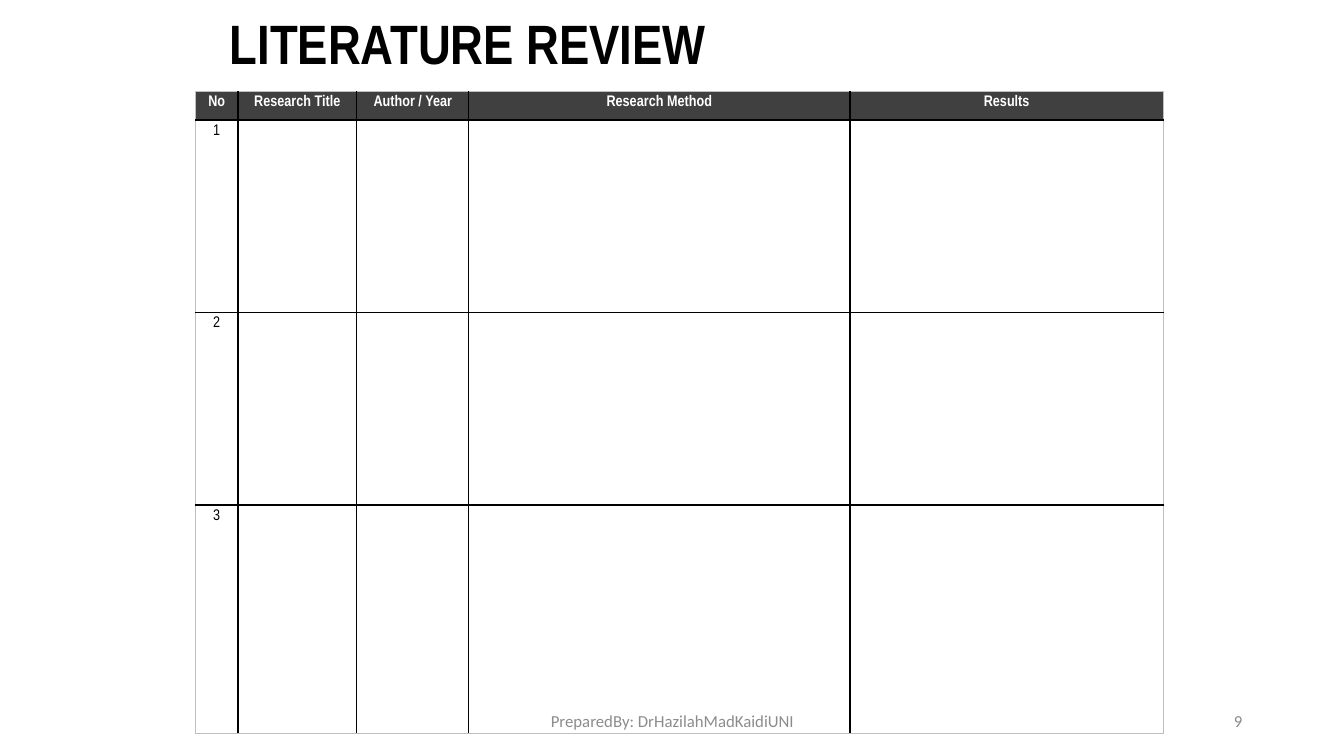
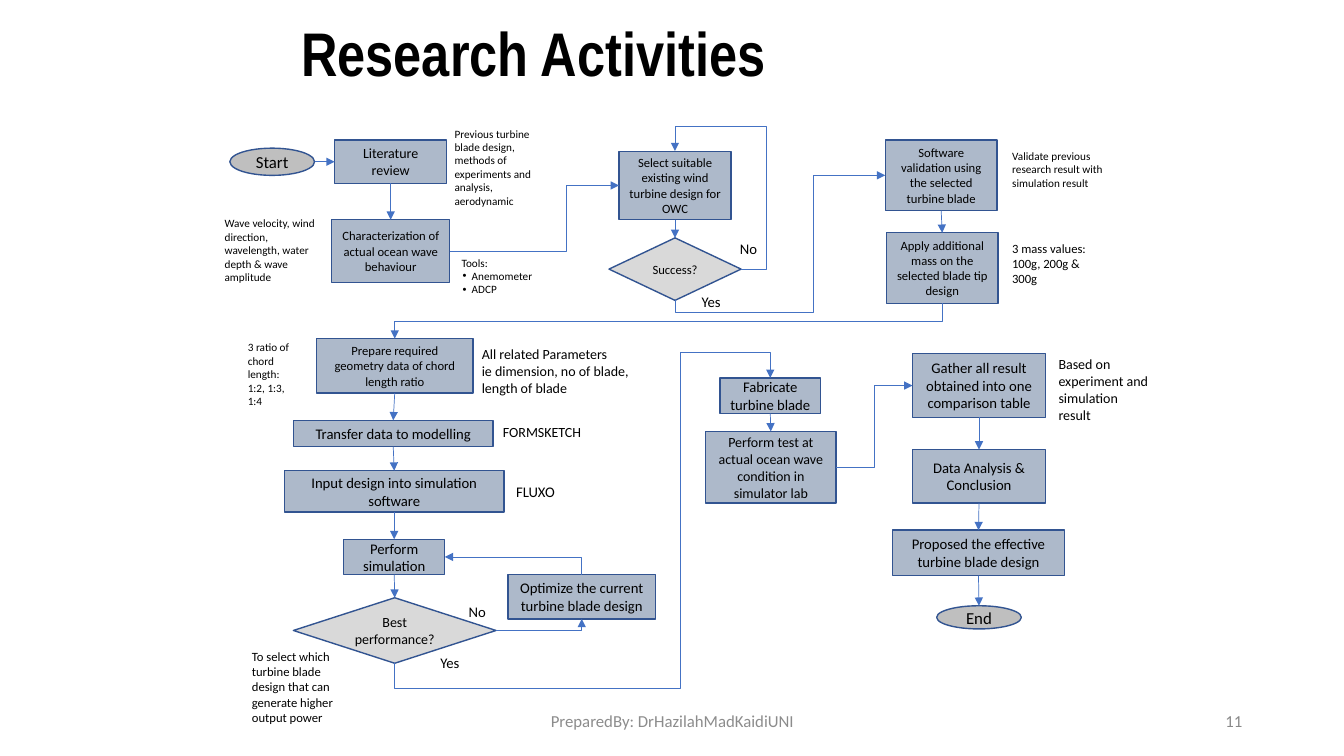
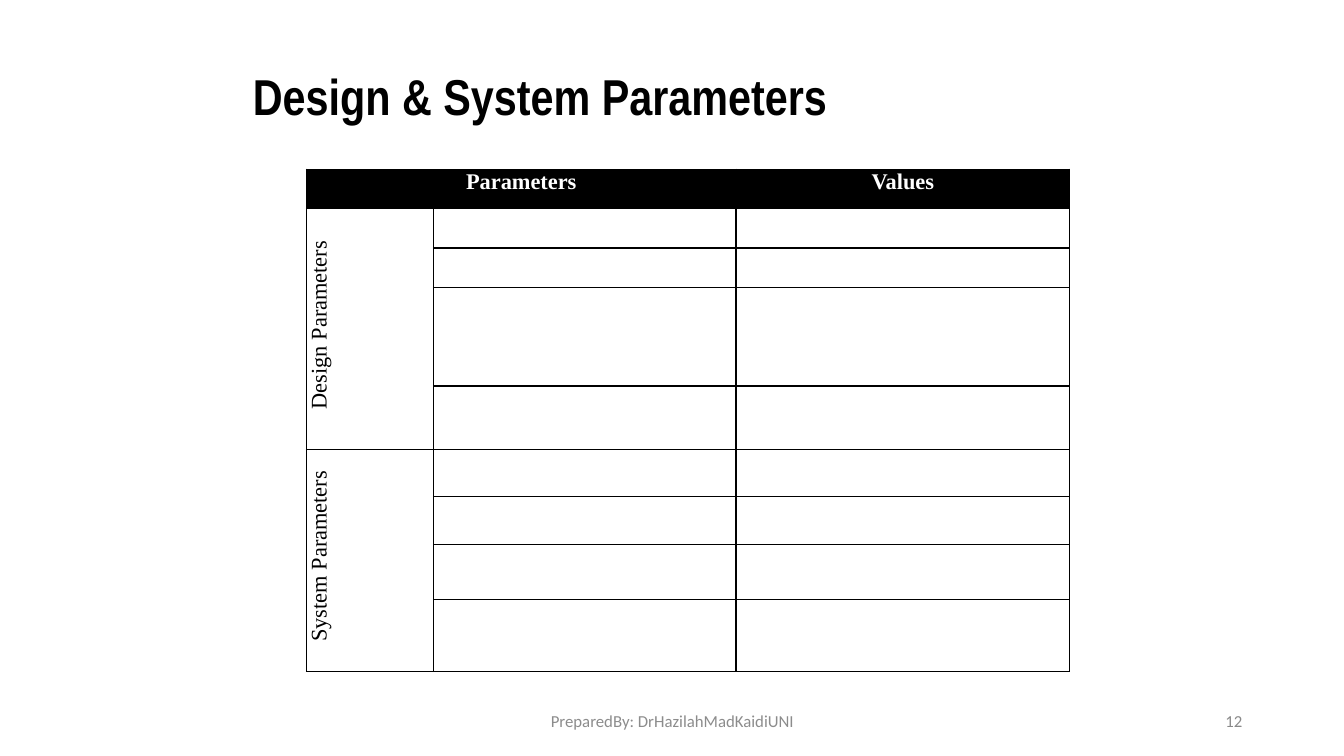
from dataclasses import dataclass
from typing import Any, NamedTuple

from lxml.etree import SubElement as Sub
from pptx import Presentation
from pptx.dml.color import RGBColor as Rgb
from pptx.enum.shapes import MSO_CONNECTOR as Link, MSO_SHAPE as Form
from pptx.enum.text import MSO_ANCHOR as Anchor, MSO_AUTO_SIZE as Auto, PP_ALIGN as Align
from pptx.oxml.ns import qn
from pptx.util import Emu, Pt

PX = 9144
HUE = {
    "ink": "000000", "paper": "FFFFFF", "head": "404040", "rim": "BFBFBF",
    "step": "ADB9CA", "choice": "D9D9D9", "end": "BFBFBF",
    "edge": "325491", "flow": "4472C4", "page": "898989", "foot": "8C8C8C",
}
BODY, TITLE, SERIF = "Calibri", "Arial Narrow", "Times New Roman"
FOOT = "PreparedBy: DrHazilahMadKaidiUNI"
KINDS = {"step": Form.RECTANGLE, "choice": Form.DIAMOND, "end": Form.OVAL}
TOP, LEFT, LOW, RIGHT = range(4)


class Box(NamedTuple):
    x: int
    y: int
    w: int
    h: int


class Node(NamedTuple):
    key: str
    kind: str
    box: Box
    text: str
    size: float


class Note(NamedTuple):
    box: Box
    text: str
    size: float
    wrap: bool = True
    dots: bool = False


class Flow(NamedTuple):
    start: str
    out: int
    end: str
    into: int
    bend: int = 0
    turn: int = 0
    flip: str = ""
    adj: tuple[float, ...] = ()


class Cell(NamedTuple):
    row: int
    col: int
    text: str
    rows: int = 1
    cols: int = 1
    side: bool = False


@dataclass
class Page:
    num: int
    title: str
    box: Box
    size: float


@dataclass
class Grid:
    box: Box
    cols: list[int]
    rows: list[int]
    cells: list[Cell]
    font: str
    size: float
    head: str
    rim: str
    pad: tuple[int, int]


def px(num: float) -> Emu:
    return Emu(round(num * PX))


def span(box: Box) -> list[Emu]:
    return [px(val) for val in box]


def rgb(hue: str) -> Rgb:
    return Rgb.from_string(HUE[hue])


def put(item: Any, vals: dict[str, Any]) -> None:
    for key, val in vals.items():
        setattr(item, key, val)


def paint(item: Any, hue: str) -> None:
    item.fill.solid()
    item.fill.fore_color.rgb = rgb(hue)


def write(frame: Any, text: str, size: float, font: str = BODY, hue: str = "ink",
          bold: bool = False, **form: Any) -> None:
    for i, line in enumerate(text.split("\n")):
        para = frame.paragraphs[0] if i == 0 else frame.add_paragraph()
        put(para, form)
        run = para.add_run()
        run.text = line
        put(run.font, {"size": Pt(size), "name": font, "bold": bold})
        run.font.color.rgb = rgb(hue)


def label(slide: Any, box: Box, text: str, size: float, **form: Any) -> None:
    frame = slide.shapes.add_textbox(*span(box)).text_frame
    put(frame, {"word_wrap": True, "vertical_anchor": Anchor.MIDDLE})
    write(frame, text, size, **form)


def start(deck: Any, page: Page) -> Any:
    slide = deck.slides.add_slide(deck.slide_layouts[6])
    label(slide, page.box, page.title, page.size, font=TITLE, bold=True, line_spacing=0.9)
    return slide


def close(slide: Any, page: Page) -> None:
    label(slide, Box(942, 695, 300, 40), str(page.num), 12, hue="page", alignment=Align.RIGHT)
    label(slide, Box(442, 695, 450, 40), FOOT, 12, hue="foot", alignment=Align.CENTER)


def draw_node(slide: Any, node: Node) -> Any:
    shape = slide.shapes.add_shape(KINDS[node.kind], *span(node.box))
    shape.shadow.inherit = False
    paint(shape, node.kind)
    shape.line.width = Pt(1)
    shape.line.color.rgb = rgb("edge")
    put(shape.text_frame, {"word_wrap": True, "vertical_anchor": Anchor.MIDDLE})
    write(shape.text_frame, node.text, node.size, alignment=Align.CENTER)
    return shape


def draw_note(slide: Any, note: Note) -> None:
    frame = slide.shapes.add_textbox(*span(note.box)).text_frame
    put(frame, {"word_wrap": note.wrap, "auto_size": Auto.SHAPE_TO_FIT_TEXT})
    write(frame, note.text, note.size)
    if note.dots:
        for para in frame.paragraphs[1:]:
            props = para._p.get_or_add_pPr()
            props.set("marL", str(px(10)))
            props.set("indent", str(px(-9)))
            Sub(props, qn("a:buFont"), typeface="Arial")
            Sub(props, qn("a:buChar"), char="•")


def point(shape: Any, side: int) -> tuple[Emu, Emu]:
    mid, half = shape.left + shape.width // 2, shape.top + shape.height // 2
    spots = {
        TOP: (mid, shape.top), LEFT: (shape.left, half),
        LOW: (mid, shape.top + shape.height), RIGHT: (shape.left + shape.width, half),
    }
    x, y = spots[side]
    return Emu(x), Emu(y)


def bend(line: Any, flow: Flow) -> None:
    x, y, w, h = line.left, line.top, line.width, line.height
    if flow.turn:
        put(line, {"left": Emu(x + (w - h) // 2), "top": Emu(y + (h - w) // 2),
                   "width": h, "height": w})
    props = line._element.spPr
    frame, geom = props.find(qn("a:xfrm")), props.find(qn("a:prstGeom"))
    for axis in "hv":
        frame.set(f"flip{axis.upper()}", str(int(axis in flow.flip)))
    frame.set("rot", str(flow.turn * 60000))
    geom.set("prst", f"bentConnector{flow.bend}")
    for i, part in enumerate(flow.adj, 1):
        Sub(geom.find(qn("a:avLst")), qn("a:gd"), name=f"adj{i}", fmla=f"val {round(part * 100000)}")


def draw_flow(slide: Any, flow: Flow, shapes: dict[str, Any], kinds: dict[str, str]) -> None:
    one, two = shapes[flow.start], shapes[flow.end]
    form = Link.ELBOW if flow.bend else Link.STRAIGHT
    line = slide.shapes.add_connector(form, *point(one, flow.out), *point(two, flow.into))
    if kinds[flow.start] != "end":
        line.begin_connect(one, flow.out)
    line.end_connect(two, flow.into)
    if flow.bend:
        bend(line, flow)
    line.line.width = Pt(0.5)
    line.line.color.rgb = rgb("flow")
    props = line._element.spPr
    Sub(props.find(qn("a:ln")), qn("a:tailEnd"), type="triangle")
    Sub(props, qn("a:effectLst"))


def border(cell: Any, hues: dict[str, str]) -> None:
    props = cell._tc.get_or_add_tcPr()
    for side, hue in hues.items():
        line = Sub(props, qn(f"a:ln{side}"), w=str(Pt(1)))
        Sub(Sub(line, qn("a:solidFill")), qn("a:srgbClr"), val=HUE[hue])


def draw_grid(slide: Any, grid: Grid) -> None:
    rows, cols = len(grid.rows), len(grid.cols)
    table = slide.shapes.add_table(rows, cols, *span(grid.box)).table
    put(table, {"first_row": False, "horz_banding": False})
    for col, wide in zip(table.columns, grid.cols):
        col.width = px(wide)
    for row, high in zip(table.rows, grid.rows):
        row.height = px(high)
    across, down = map(px, grid.pad)
    for r in range(rows):
        for c in range(cols):
            cell = table.cell(r, c)
            rims = {"L": c == 0, "R": c == cols - 1, "T": r == 0, "B": r == rows - 1}
            border(cell, {side: grid.rim if rim else "ink" for side, rim in rims.items()})
            paint(cell, "paper" if r else grid.head)
            put(cell, {"margin_left": across, "margin_right": across,
                       "margin_top": down, "margin_bottom": down})
    for item in grid.cells:
        cell = table.cell(item.row, item.col)
        if item.rows * item.cols > 1:
            cell.merge(table.cell(item.row + item.rows - 1, item.col + item.cols - 1))
        top = item.row == 0
        write(cell.text_frame, item.text, grid.size, grid.font, "paper" if top else "ink",
              top, alignment=Align.CENTER)
        if item.side:
            cell.vertical_anchor = Anchor.MIDDLE
            cell._tc.get_or_add_tcPr().set("vert", "vert270")
            cell.text_frame.paragraphs[0]._p.get_or_add_pPr().set("marL", str(px(8)))


HEADS = ["No", "Research Title", "Author / Year", "Research Method", "Results"]
REVIEW = Grid(
    Box(194, 91, 959, 638), [42, 118, 111, 378, 311], [28, 191, 191, 227],
    [Cell(0, i, text) for i, text in enumerate(HEADS)]
    + [Cell(i, 0, str(i)) for i in range(1, 4)],
    TITLE, 11, "head", "rim", (8, 4),
)
PARAMS = Grid(
    Box(304, 168, 757, 499), [126, 300, 331], [39, 39, 39, 98, 63, 47, 47, 55, 71],
    [Cell(0, 0, "Parameters", cols=2), Cell(0, 2, "Values"),
     Cell(1, 0, "Design Parameters", rows=4, side=True),
     Cell(5, 0, "System Parameters", rows=4, side=True)],
    SERIF, 16, "ink", "ink", (7, 0),
)
NODES = [
    Node("start", "end", Box(228, 147, 84, 27), "Start", 12),
    Node("read", "step", Box(332, 139, 111, 43), "Literature review", 10),
    Node("wave", "step", Box(329, 218, 117, 62), "Characterization of actual ocean wave behaviour", 9),
    Node("pick", "step", Box(614, 150, 111, 68), "Select suitable existing wind turbine design for OWC", 9),
    Node("good", "choice", Box(604, 236, 131, 62), "Success?", 9),
    Node("check", "step", Box(878, 139, 111, 70), "Software validation using the selected turbine blade", 9),
    Node("mass", "step", Box(879, 231, 111, 70), "Apply additional mass on the selected blade tip design", 9),
    Node("chord", "step", Box(314, 336, 155, 54), "Prepare required geometry data of chord length ratio", 9),
    Node("model", "step", Box(291, 417, 198, 26), "Transfer data to modelling", 10.5),
    Node("input", "step", Box(282, 467, 218, 41), "Input design into simulation software", 10.5),
    Node("run", "step", Box(341, 535, 100, 35), "Perform simulation", 10.5),
    Node("best", "choice", Box(291, 593, 201, 65), "Best performance?", 10),
    Node("tune", "step", Box(504, 570, 146, 44), "Optimize the current turbine blade design", 10.5),
    Node("make", "step", Box(714, 375, 100, 35), "Fabricate turbine blade", 10.5),
    Node("test", "step", Box(700, 428, 129, 71), "Perform test at actual ocean wave condition in simulator lab", 10),
    Node("gather", "step", Box(905, 351, 132, 63), "Gather all result obtained into one comparison table", 10.5),
    Node("data", "step", Box(905, 446, 132, 53), "Data Analysis & Conclusion", 10.5),
    Node("offer", "step", Box(885, 526, 171, 45), "Proposed the effective turbine blade design", 10.5),
    Node("end", "end", Box(929, 601, 84, 23), "End", 12),
]
NOTES = [
    Note(Box(213, 210, 117, 77), "Wave velocity, wind direction, wavelength, water depth & wave amplitude", 8),
    Note(Box(441, 121, 112, 91), "Previous turbine blade design, methods of experiments and analysis, aerodynamic", 8),
    Note(Box(448, 249, 91, 51), "Tools:\nAnemometer\nADCP", 8, False, True),
    Note(Box(994, 143, 122, 51), "Validate previous research result with simulation result", 8),
    Note(Box(994, 234, 106, 56), "3 mass values:\n100g, 200g & 300g", 9),
    Note(Box(236, 333, 73, 64), "3 ratio of chord length:\n1:2, 1:3, 1:4", 8),
    Note(Box(468, 338, 172, 61), "All related Parameters\nie dimension, no of blade, length of blade", 10),
    Note(Box(489, 415, 114, 27), "FORMSKETCH", 10),
    Note(Box(502, 474, 59, 28), "FLUXO", 10.5),
    Note(Box(1040, 348, 111, 77), "Based on experiment and simulation result", 10),
    Note(Box(240, 639, 119, 86), "To select which turbine blade design that can generate higher output power", 9),
    Note(Box(455, 593, 37, 28), "No", 10.5, False),
    Note(Box(427, 644, 40, 28), "Yes", 10.5, False),
    Note(Box(724, 233, 37, 28), "No", 10.5, False),
    Note(Box(686, 286, 40, 28), "Yes", 10.5, False),
]
CHAINS = [
    ["read", "wave"], ["pick", "good"], ["check", "mass"], ["make", "test"],
    ["chord", "model", "input", "run", "best"], ["gather", "data", "offer", "end"],
]
FLOWS = [Flow("start", RIGHT, "read", LEFT)]
FLOWS += [Flow(a, LOW, b, TOP) for chain in CHAINS for a, b in zip(chain, chain[1:])]
FLOWS += [
    Flow("wave", RIGHT, "pick", LEFT, 3, 0, "v", (0.69,)),
    Flow("good", RIGHT, "pick", TOP, 4, 0, "hv", (-0.38, 1.21)),
    Flow("good", LOW, "check", LEFT, 4, 90, "hv", (-0.1, 0.66)),
    Flow("mass", LOW, "chord", TOP, 3, 90, "", (0.5,)),
    Flow("best", RIGHT, "tune", LOW, 2, 0, "v"),
    Flow("tune", TOP, "run", RIGHT, 2, 270, "v"),
    Flow("best", LOW, "make", TOP, 5, 90, "hv", (-0.09, 0.76, 1.09)),
    Flow("test", RIGHT, "gather", LEFT, 3, 0, "v", (0.5,)),
]


def draw_chart(slide: Any) -> None:
    shapes = {node.key: draw_node(slide, node) for node in NODES}
    kinds = {node.key: node.kind for node in NODES}
    for flow in FLOWS:
        draw_flow(slide, flow, shapes, kinds)
    for note in NOTES:
        draw_note(slide, note)


def main() -> None:
    deck = Presentation()
    put(deck, {"slide_width": px(1333), "slide_height": px(750)})
    plan = [
        (Page(9, "LITERATURE REVIEW", Box(218, 13, 862, 67), 39.6), REVIEW),
        (Page(11, "Research Activities", Box(289, 17, 680, 78), 44), None),
        (Page(12, "Design & System Parameters", Box(241, 36, 900, 125), 36), PARAMS),
    ]
    for page, grid in plan:
        slide = start(deck, page)
        if grid:
            draw_grid(slide, grid)
        else:
            draw_chart(slide)
        close(slide, page)
    deck.save("out.pptx")


if __name__ == "__main__":
    main()
